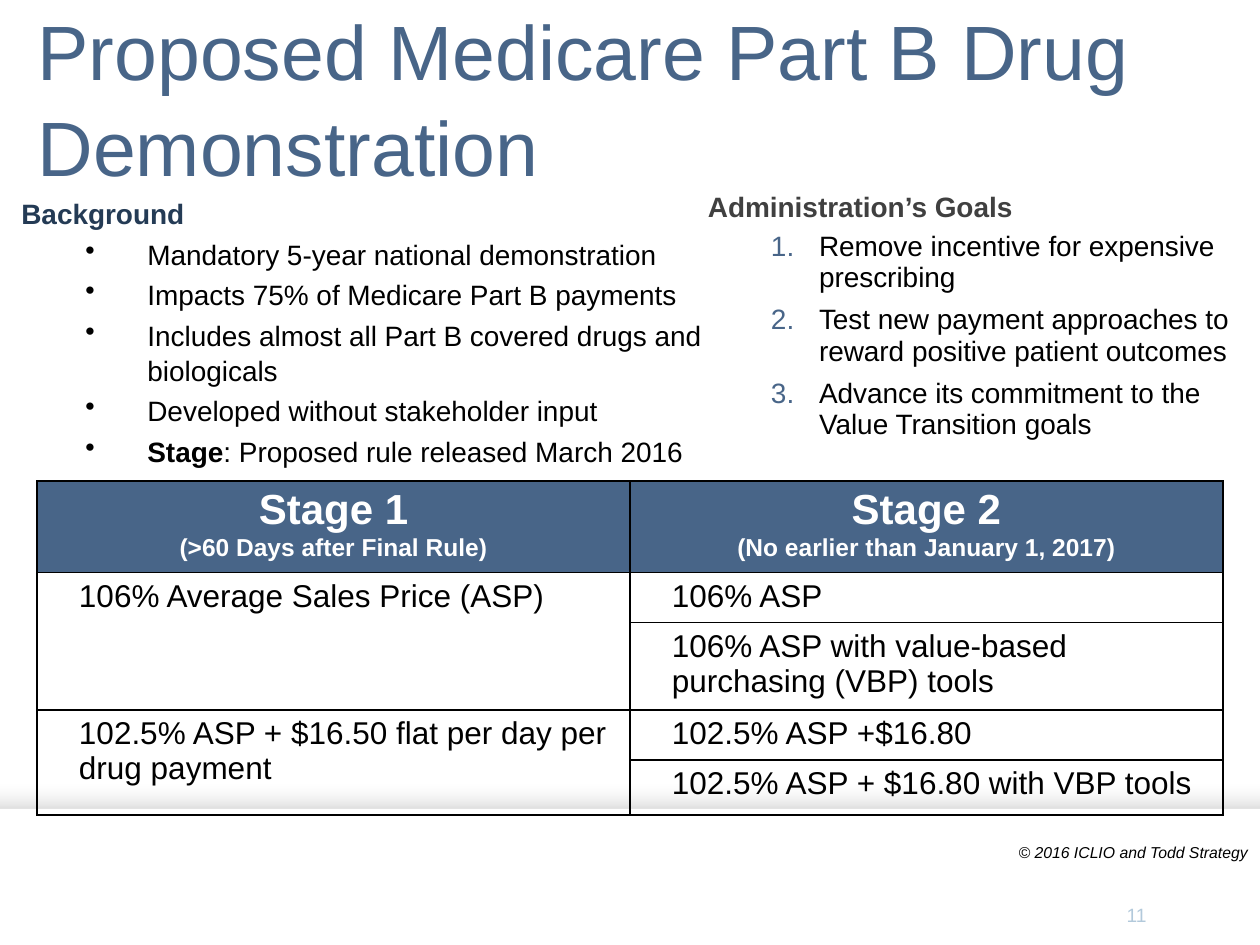
from lxml.etree import SubElement
from pptx import Presentation
from pptx.dml.color import RGBColor
from pptx.enum.shapes import MSO_SHAPE
from pptx.enum.text import MSO_ANCHOR, PP_ALIGN
from pptx.oxml import parse_xml
from pptx.oxml.ns import nsdecls, qn
from pptx.util import Pt

PX = 914400 // 126
BLUE, NAVY, GRAY, BLACK, WHITE = "486588", "243B55", "404040", "000000", "FFFFFF"


def write(p, text, size=16, color=BLACK, bold=False, italic=False, align=None,
          before=0, after=0, line=None, left=0, hang=0, bullet=None, bullet_color=BLACK):
    """Fill a paragraph; **marks** around a part of the text turn it bold."""
    pPr = p._p.get_or_add_pPr()
    if left:
        pPr.set("marL", str(left * PX))
        pPr.set("indent", str(-hang * PX))
    p.alignment = align
    p.space_before, p.space_after = Pt(before), Pt(after)
    if line:
        p.line_spacing = line
    if bullet:
        p.level = 1
        clr = SubElement(pPr, qn("a:buClr"))
        SubElement(clr, qn("a:srgbClr")).set("val", bullet_color)
        if bullet == "1.":
            SubElement(pPr, qn("a:buAutoNum")).set("type", "arabicPeriod")
        else:
            SubElement(pPr, qn("a:buChar")).set("char", bullet)
    for i, part in enumerate(text.split("**")):
        if part:
            r = p.add_run()
            r.text = part
            f = r.font
            f.name, f.size, f.italic = "Arial", Pt(size), italic
            f.bold = bold or i % 2 == 1
            f.color.rgb = RGBColor.from_string(color)


def add_text(x, y, w, h, side=None):
    tf = s.shapes.add_textbox(x * PX, y * PX, w * PX, h * PX).text_frame
    tf.word_wrap = True
    if side is not None:
        tf.margin_left = tf.margin_right = side * PX
    return tf


prs = Presentation()
prs.slide_width, prs.slide_height = 1260 * PX, 945 * PX
s = prs.slides.add_slide(prs.slide_layouts[5])

# Footer band with a soft shadow upwards, behind everything
band = s.shapes.add_shape(MSO_SHAPE.RECTANGLE, -33 * PX, 809 * PX, 1352 * PX, 136 * PX)
band.fill.solid()
band.fill.fore_color.rgb = RGBColor.from_string(WHITE)
band.line.fill.background()
band._element.spPr.append(parse_xml(
    f'<a:effectLst {nsdecls("a")}><a:outerShdw blurRad="{Pt(17.5)}" dist="0" dir="16200000">'
    '<a:srgbClr val="000000"><a:alpha val="27000"/></a:srgbClr></a:outerShdw></a:effectLst>'))
s.shapes._spTree.insert(2, band._element)

# Title
title = s.shapes.title
title.left, title.top, title.width, title.height = 25 * PX, -11 * PX, 1235 * PX, 158 * PX
tf = title.text_frame
tf.word_wrap = True
tf.vertical_anchor = MSO_ANCHOR.TOP
tf.margin_top = 11 * PX
write(tf.paragraphs[0], "Proposed Medicare Part B Drug Demonstration", size=44,
      color=BLUE, align=PP_ALIGN.LEFT, line=1.04)

# Slide number
tf = add_text(1023, 890, 136, 50)
tf.vertical_anchor = MSO_ANCHOR.MIDDLE
write(tf.paragraphs[0], "11", size=11, color="B2C9DB", align=PP_ALIGN.RIGHT)

# Goals
tf = add_text(708, 186, 538, 321, side=0)
write(tf.paragraphs[0], "Administration’s Goals", color=GRAY, bold=True, after=2, line=0.94)
for goal in ("Remove incentive for expensive prescribing",
             "Test new payment approaches to reward positive patient outcomes",
             "Advance its commitment to the Value Transition goals"):
    write(tf.add_paragraph(), goal, before=2, after=4, line=0.94,
          left=111, hang=48, bullet="1.", bullet_color=BLUE)

# Background
tf = add_text(9, 189, 714, 272)
write(tf.paragraphs[0], "Background", color=NAVY, bold=True, line=1.04)
for point in ("Mandatory 5-year national demonstration",
              "Impacts 75% of Medicare Part B payments",
              "Includes almost all Part B covered drugs and biologicals",
              "Developed without stakeholder input",
              "**Stage**: Proposed rule released March 2016"):
    write(tf.add_paragraph(), point, before=3.2, line=1.04, left=126, hang=62, bullet="•")

# Stages
HEADS = [("Stage 1", "(>60 Days after Final Rule)"),
         ("Stage 2", "(No earlier than January 1, 2017)")]
ROWS = [("106% Average Sales Price (ASP)", "106% ASP"),
        ("", "106% ASP with value-based purchasing (VBP) tools"),
        ("102.5% ASP + $16.50 flat per day per drug payment", "102.5% ASP +$16.80"),
        ("", "102.5% ASP + $16.80 with VBP tools")]
HEIGHTS = [88, 48, 84, 48, 55]
table = s.shapes.add_table(5, 2, 37 * PX, 481 * PX, 1186 * PX, sum(HEIGHTS) * PX).table
for col in table.columns:
    col.width = 593 * PX
for row, height in zip(table.rows, HEIGHTS):
    row.height = height * PX
for top in (1, 3):
    table.cell(top, 0).merge(table.cell(top + 1, 0))

for i, texts in enumerate([HEADS] + ROWS):
    for j, text in enumerate(texts):
        cell = table.cell(i, j)
        cell.margin_left = cell.margin_right = 9 * PX
        cell.margin_top = cell.margin_bottom = 6 * PX
        tcPr = cell._tc.get_or_add_tcPr()
        for edge in "LRTB":
            tcPr.append(parse_xml(
                f'<a:ln{edge} {nsdecls("a")} w="{Pt(1)}"><a:solidFill>'
                f'<a:srgbClr val="{BLACK}"/></a:solidFill></a:ln{edge}>'))
        p = cell.text_frame.paragraphs[0]
        if i == 0:
            cell.fill.solid()
            cell.fill.fore_color.rgb = RGBColor.from_string(BLUE)
            name, date = text
            write(p, name, size=24, color=WHITE, bold=True, align=PP_ALIGN.CENTER)
            write(cell.text_frame.add_paragraph(), date, size=14, color=WHITE,
                  bold=True, align=PP_ALIGN.CENTER)
        else:
            cell.fill.background()
            if text:
                write(p, text, size=18, left=33)

# Copyright
tf = add_text(839, 837, 421, 32)
write(tf.paragraphs[0], "© 2016 ICLIO and Todd Strategy", size=9, italic=True,
      align=PP_ALIGN.RIGHT)

prs.save("out.pptx")
